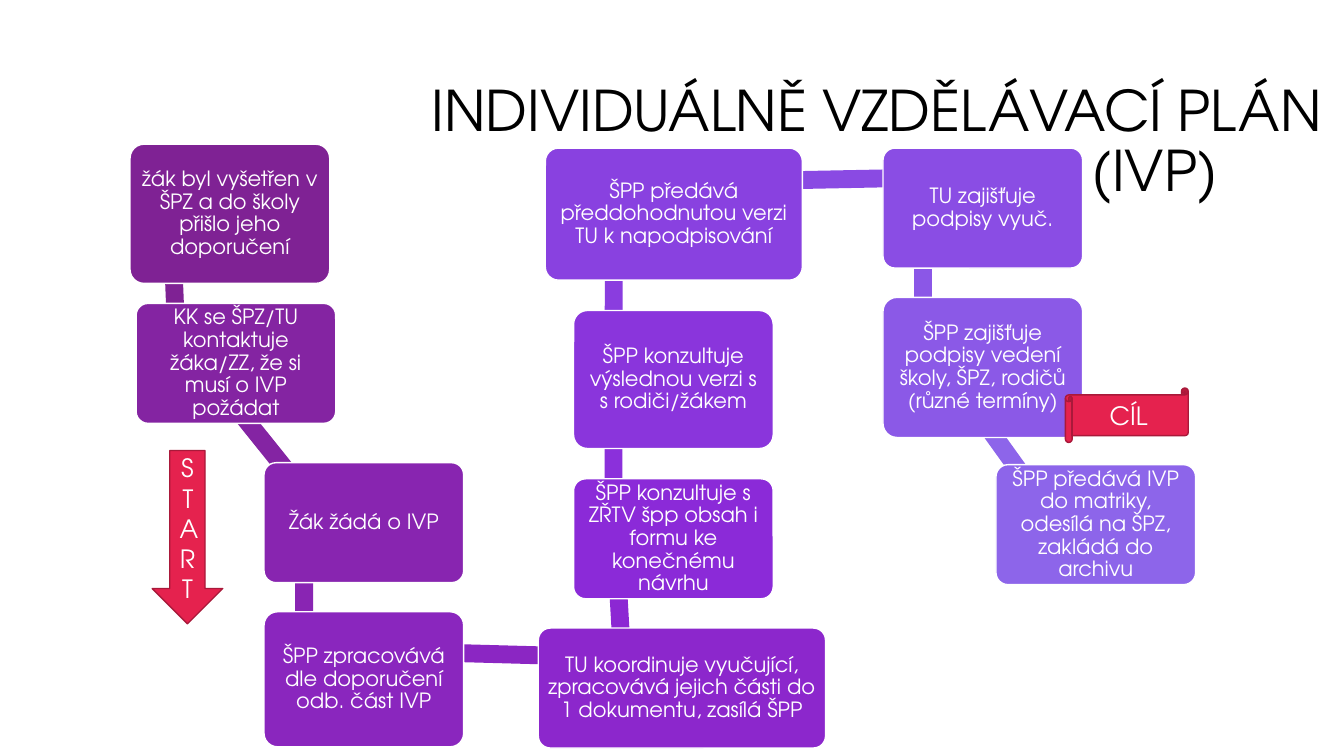
import math
from dataclasses import dataclass

import pptx
import pptx.util
import pptx.dml.color
import pptx.enum.shapes
import pptx.enum.text

Pt = pptx.util.Pt
Kind = pptx.enum.shapes.MSO_SHAPE
Align = pptx.enum.text.PP_ALIGN
Anchor = pptx.enum.text.MSO_ANCHOR


@dataclass(frozen=True)
class Theme:
    font: str = "TeX Gyre Adventor"
    title: int = 40
    step: int = 15
    sign: int = 18
    black: str = "000000"
    white: str = "FFFFFF"
    red: str = "E5224E"
    edge: str = "A9193A"


THEME = Theme()
WIDE, LOW = 142.6, 85.7
THICK = 12.8
SHIFT = (-42.7, -21.7)

STEPS = [
    ("žák byl vyšetřen v ŠPZ a do školy přišlo jeho doporučení",
     (92.9, 103, WIDE, 99.4), "7F2294", "7F2294"),
    ("KK se ŠPZ/TU kontaktuje žáka/ZZ, že si musí o IVP požádat",
     (97.2, 216.7, WIDE, LOW), "8424A2", "8424A3"),
    ("Žák žádá o IVP",
     (188.6, 330.5, WIDE, LOW), "8825B0", "8925B3"),
    ("ŠPP zpracovává dle doporučení odb. část IVP",
     (188.6, 437, WIDE, 96.5), "8A26BE", "8B26C3"),
    ("TU koordinuje vyučující, zpracovává jejich části do 1 dokumentu, zasílá ŠPP",
     (384.5, 448.6, 205.2, LOW), "8C27CC", "8C27D3"),
    ("ŠPP konzultuje s ZŘTV špp obsah i formu ke konečnému návrhu",
     (409.7, 342, WIDE, LOW), "8B2AD8", "8B30DB"),
    ("ŠPP konzultuje výslednou verzi s s rodiči/žákem",
     (409.7, 221.8, WIDE, 98.6), "8A35DC", "8A3DDF"),
    ("ŠPP předává předdohodnutou verzi TU k napodpisování",
     (389.5, 105.8, 183.6, 94.3), "8941E0", "8A4AE3"),
    ("TU zajišťuje podpisy vyuč.",
     (630.7, 105.8, WIDE, LOW), "8A4DE4", "8B57E7"),
    ("ŠPP zajišťuje podpisy vedení školy, ŠPZ, rodičů (různé termíny)",
     (630.7, 212.4, WIDE, 100.1), "8B59E7", "8D65EA"),
    ("ŠPP předává IVP do matriky, odesílá na ŠPZ, zakládá do archivu",
     (711.4, 331.9, WIDE, LOW), "8D65EA", None),
]


def color(code):
    return pptx.dml.color.RGBColor.from_string(code)


def style(frame, size, tint, space=None):
    frame.word_wrap = True
    frame.vertical_anchor = Anchor.MIDDLE
    for para in frame.paragraphs:
        para.alignment = Align.CENTER
        para.line_spacing = space
        para.space_before = Pt(0)
        for run in para.runs:
            run.font.name = THEME.font
            run.font.size = Pt(size)
            run.font.color.rgb = color(tint)


def add_form(slide, kind, place, fill, line=None):
    form = slide.shapes.add_shape(kind, *map(Pt, place))
    form.shadow.inherit = False
    form.fill.solid()
    form.fill.fore_color.rgb = color(fill)
    if line:
        form.line.color.rgb = color(line)
        form.line.width = Pt(1)
    else:
        form.line.fill.background()
    return form


def add_title(slide):
    title = slide.shapes.title
    title.left, title.top, title.width, title.height = map(
        Pt, (287.3, 51.8, 678.2, 101.5))
    frame = title.text_frame
    frame.text = "INDIVIDUÁLNĚ VZDĚLÁVACÍ PLÁN\n(IVP)"
    frame.auto_size = pptx.enum.text.MSO_AUTO_SIZE.NONE
    style(frame, THEME.title, THEME.black, 0.9)
    props = frame.paragraphs[1]._p.get_or_add_pPr()
    props.set("marL", str(Pt(397)))
    props.set("indent", "0")


def center(place):
    left, top, width, height = place
    return left + width / 2, top + height / 2


def add_link(slide, start, end, fill):
    (x1, y1), (x2, y2) = center(start), center(end)
    span = math.hypot(x2 - x1, y2 - y1)
    x = (x1 + x2) / 2 + SHIFT[0]
    y = (y1 + y2) / 2 + SHIFT[1]
    place = (x - span / 2, y - THICK / 2, span, THICK)
    link = add_form(slide, Kind.RECTANGLE, place, fill)
    link.rotation = math.degrees(math.atan2(y2 - y1, x2 - x1))


def add_step(slide, text, place, fill):
    box = add_form(slide, Kind.ROUNDED_RECTANGLE, place, fill, THEME.white)
    box.adjustments[0] = 0.1
    frame = box.text_frame
    frame.margin_left = frame.margin_right = Pt(4.5)
    frame.margin_top = frame.margin_bottom = Pt(4.5)
    frame.text = text
    style(frame, THEME.step, THEME.white, 0.9)


def add_sign(slide, kind, text, place):
    sign = add_form(slide, kind, place, THEME.red, THEME.edge)
    sign.text_frame.text = text
    style(sign.text_frame, THEME.sign, THEME.white)


def main():
    deck = pptx.Presentation()
    deck.slide_width, deck.slide_height = Pt(960), Pt(540)
    slide = deck.slides.add_slide(deck.slide_layouts[5])
    add_title(slide)
    for spot, (text, place, fill, tint) in enumerate(STEPS):
        if tint:
            add_link(slide, place, STEPS[spot + 1][1], tint)
        add_step(slide, text, place, fill)
    add_sign(slide, Kind.HORIZONTAL_SCROLL, "CÍL", (761, 277.2, 87.8, 38.9))
    add_sign(slide, Kind.DOWN_ARROW, "START", (108.7, 321.8, 50.4, 123.8))
    deck.save("out.pptx")


if __name__ == "__main__":
    main()
